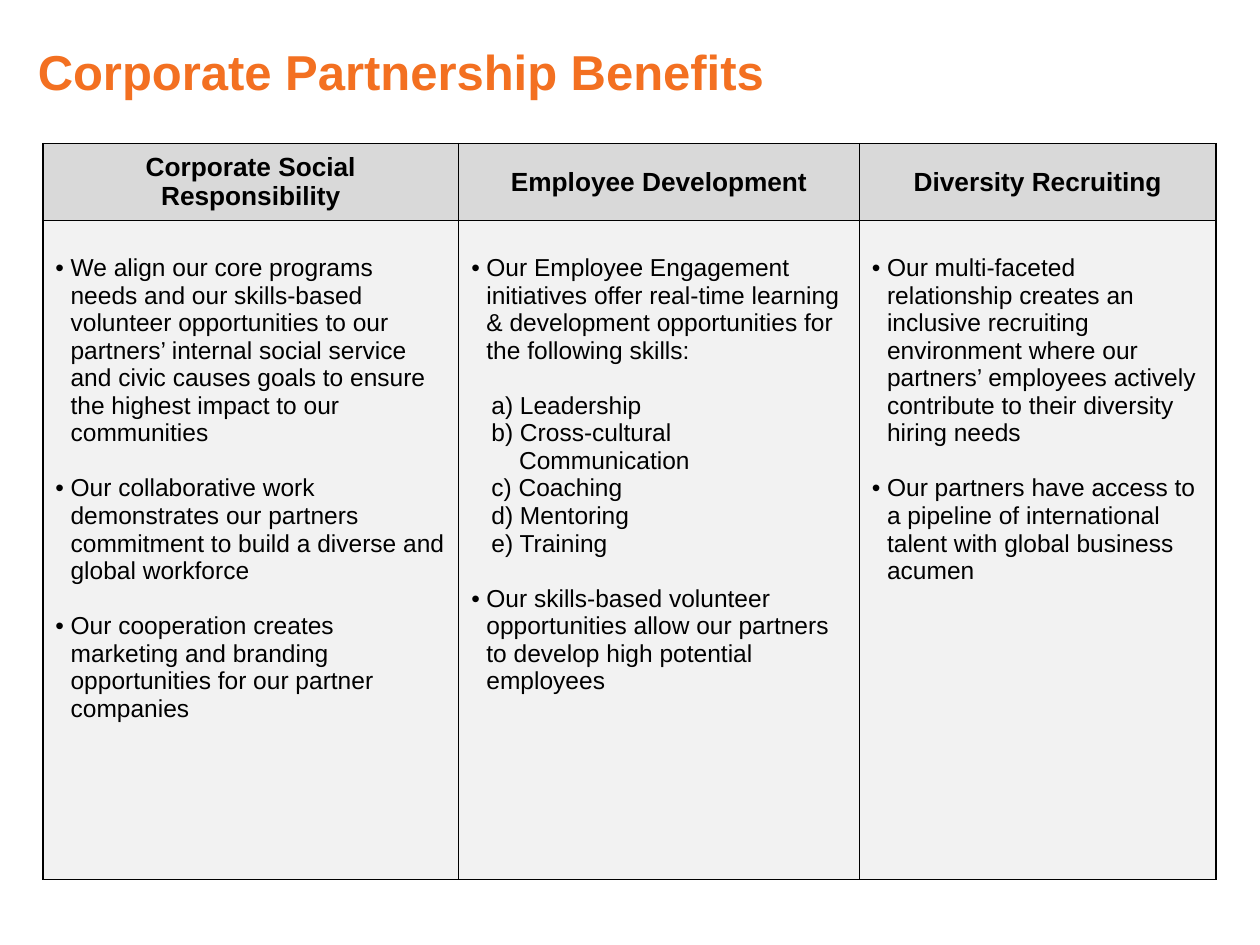
from dataclasses import dataclass

from lxml.etree import SubElement
from pptx import Presentation
from pptx.dml.color import RGBColor
from pptx.enum.text import MSO_ANCHOR, MSO_AUTO_SIZE, PP_ALIGN
from pptx.oxml.ns import qn
from pptx.table import _Cell
from pptx.text.text import _Paragraph
from pptx.util import Inches, Pt

COLORS = {
    "title": "F37021",
    "text": "000000",
    "border": "000000",
    "header": "D9D9D9",
    "body": "F2F2F2",
}
FONT = "Arial"
SLIDE_WIDTH, SLIDE_HEIGHT = Inches(10), Inches(7.5)
TABLE_LEFT, TABLE_TOP = Inches(0.34), Inches(1.14)
HEADER_HEIGHT, BODY_HEIGHT = Inches(0.61), Inches(5.23)
LINE_GAP = Pt(15.7)
BODY_TOP_MARGIN = Inches(0.27)


@dataclass(frozen=True)
class Item:
    text: str
    bullet: str = "•"
    left: float = 0.12
    hanging: float = 0.12
    gap_before: bool = True


@dataclass(frozen=True)
class Benefit:
    heading: str
    width_share: float
    items: list[Item]


def skill(text: str, first: bool = False) -> Item:
    return Item(text, "", 0.38, 0.22, first)


BENEFITS = [
    Benefit("Corporate Social Responsibility", 0.33, [
        Item("We align our core programs needs and our skills-based volunteer "
             "opportunities to our partners’ internal social service and civic "
             "causes goals to ensure the highest impact to our communities"),
        Item("Our collaborative work demonstrates our partners commitment to "
             "build a diverse and global workforce"),
        Item("Our cooperation creates marketing and branding opportunities for "
             "our partner companies"),
    ]),
    Benefit("Employee Development", 0.318, [
        Item("Our Employee Engagement initiatives offer real-time learning & "
             "development opportunities for the following skills:"),
        skill("a) Leadership", first=True),
        skill("b) Cross-cultural Communication"),
        skill("c) Coaching"),
        skill("d) Mentoring"),
        skill("e) Training"),
        Item("Our skills-based volunteer opportunities allow our partners to "
             "develop high potential employees"),
    ]),
    Benefit("Diversity Recruiting", 0.283, [
        Item("Our multi-faceted relationship creates an inclusive recruiting "
             "environment where our partners’ employees actively contribute to "
             "their diversity hiring needs"),
        Item("Our partners have access to a pipeline of international talent "
             "with global business acumen"),
    ]),
]


def set_font(paragraph: _Paragraph, size: float, color: str, bold: bool) -> None:
    font = paragraph.font
    font.name, font.size, font.bold = FONT, Pt(size), bold
    font.color.rgb = RGBColor.from_string(COLORS[color])


def style_cell(cell: _Cell, fill: str) -> None:
    properties = cell._tc.get_or_add_tcPr()
    for side in ("a:lnL", "a:lnR", "a:lnT", "a:lnB"):
        border = SubElement(properties, qn(side), w=str(Pt(1)))
        line_fill = SubElement(border, qn("a:solidFill"))
        SubElement(line_fill, qn("a:srgbClr"), val=COLORS["border"])
    cell.fill.solid()
    cell.fill.fore_color.rgb = RGBColor.from_string(COLORS[fill])


def write_heading(cell: _Cell, heading: str) -> None:
    style_cell(cell, "header")
    cell.vertical_anchor = MSO_ANCHOR.MIDDLE
    paragraph = cell.text_frame.paragraphs[0]
    paragraph.text = heading
    paragraph.alignment = PP_ALIGN.CENTER
    set_font(paragraph, 15, "text", True)


def write_items(cell: _Cell, items: list[Item]) -> None:
    style_cell(cell, "body")
    cell.margin_top = BODY_TOP_MARGIN
    for index, item in enumerate(items):
        frame = cell.text_frame
        paragraph = frame.add_paragraph() if index else frame.paragraphs[0]
        paragraph.text = item.text
        properties = paragraph._p.get_or_add_pPr()
        properties.set("marL", str(Inches(item.left)))
        properties.set("indent", str(-Inches(item.hanging)))
        if item.bullet:
            SubElement(properties, qn("a:buFont"), typeface=FONT)
            SubElement(properties, qn("a:buChar"), char=item.bullet)
        if index and item.gap_before:
            paragraph.space_before = LINE_GAP
        set_font(paragraph, 14, "text", False)


def main() -> None:
    presentation = Presentation()
    presentation.slide_width = SLIDE_WIDTH
    presentation.slide_height = SLIDE_HEIGHT
    slide = presentation.slides.add_slide(presentation.slide_layouts[5])

    title = slide.shapes.title
    title.left, title.top = Inches(0.2), Inches(0.22)
    title.width, title.height = Inches(8.28), Inches(0.69)
    title.text_frame.text = "Corporate Partnership Benefits"
    title.text_frame.auto_size = MSO_AUTO_SIZE.NONE
    title.text_frame.vertical_anchor = MSO_ANCHOR.MIDDLE
    headline = title.text_frame.paragraphs[0]
    headline.alignment = PP_ALIGN.LEFT
    set_font(headline, 28, "title", True)

    widths = [round(SLIDE_WIDTH * benefit.width_share) for benefit in BENEFITS]
    benefits_table = slide.shapes.add_table(
        2, len(BENEFITS), TABLE_LEFT, TABLE_TOP,
        sum(widths), HEADER_HEIGHT + BODY_HEIGHT,
    ).table
    benefits_table.horz_banding = False
    benefits_table.rows[0].height = HEADER_HEIGHT
    benefits_table.rows[1].height = BODY_HEIGHT
    for column, (benefit, width) in enumerate(zip(BENEFITS, widths)):
        benefits_table.columns[column].width = width
        write_heading(benefits_table.cell(0, column), benefit.heading)
        write_items(benefits_table.cell(1, column), benefit.items)

    presentation.save("out.pptx")


if __name__ == "__main__":
    main()
